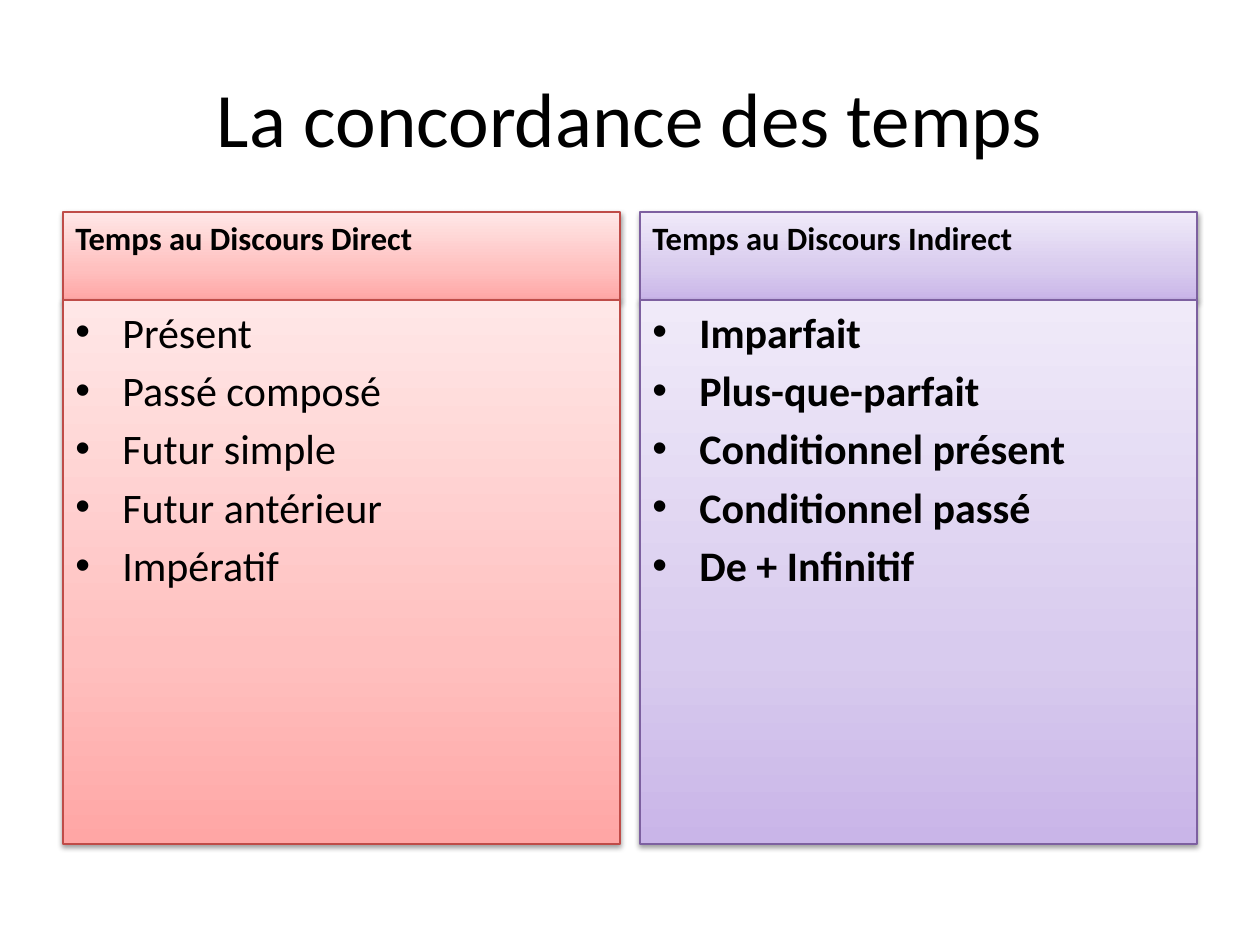
"""Build the slide on French tense agreement in reported speech."""
from lxml.etree import SubElement
from pptx import Presentation
from pptx.dml.color import RGBColor
from pptx.enum.shapes import MSO_SHAPE as Shape
from pptx.enum.text import MSO_ANCHOR as Anchor, PP_ALIGN as Align
from pptx.oxml.ns import qn
from pptx.util import Emu, Pt

EMU_PER_PX = 914400 / 126
BLACK = RGBColor(0x00, 0x00, 0x00)
RED = RGBColor(0xBF, 0x4C, 0x48)
PURPLE = RGBColor(0x7D, 0x60, 0xA0)
RED_SHADES = (RGBColor(0xFF, 0xA6, 0xA5), RGBColor(0xFF, 0xC0, 0xBF), RGBColor(0xFF, 0xE7, 0xE7))
PURPLE_SHADES = (RGBColor(0xC9, 0xB5, 0xE8), RGBColor(0xD8, 0xCB, 0xEE), RGBColor(0xF0, 0xEA, 0xF9))
SHADE_STOPS = (0, 35000, 100000)

COLUMNS = (
    ("Temps au Discours Direct", RED, RED_SHADES, False,
     ("Présent", "Passé composé", "Futur simple", "Futur antérieur", "Impératif")),
    ("Temps au Discours Indirect", PURPLE, PURPLE_SHADES, True,
     ("Imparfait", "Plus-que-parfait", "Conditionnel présent", "Conditionnel passé",
      "De + Infinitif")),
)
LEFT, COLUMN_WIDTH, COLUMN_STEP = 63, 557, 577
HEADER_TOP, HEADER_HEIGHT, LIST_HEIGHT = 212, 88, 544


def px(length):
    return Emu(round(length * EMU_PER_PX))


class TenseSlide:
    """Holds the text style and the current slide."""

    def __init__(self, deck, font="Calibri"):
        self.slide = deck.slides.add_slide(deck.slide_layouts[6])
        self.font = font

    def text_run(self, paragraph, text, size, bold=False):
        run = paragraph.add_run()
        run.text = text
        run.font.name = self.font
        run.font.size = Pt(size)
        run.font.bold = bold
        run.font.color.rgb = BLACK

    def title(self, text, *box):
        frame = self.slide.shapes.add_textbox(*map(px, box)).text_frame
        frame.word_wrap = True
        frame.vertical_anchor = Anchor.MIDDLE
        frame.paragraphs[0].alignment = Align.CENTER
        self.text_run(frame.paragraphs[0], text, 44)

    def panel(self, outline, shades, *box):
        panel = self.slide.shapes.add_shape(Shape.RECTANGLE, *map(px, box))
        panel.line.color.rgb = outline
        panel.line.width = Pt(0.75)
        self.shade(panel, shades)
        self.drop_shadow(panel)
        frame = panel.text_frame
        frame.word_wrap = True
        frame.vertical_anchor = Anchor.TOP
        frame.paragraphs[0].alignment = Align.LEFT
        return frame

    def shade(self, panel, shades):
        panel.fill.gradient()
        panel.fill.gradient_angle = 90
        stops = next(panel.element.spPr.iter(qn("a:gsLst")))
        for stop in list(stops):
            stops.remove(stop)
        for position, colour in zip(SHADE_STOPS, shades):
            stop = SubElement(stops, qn("a:gs"), pos=str(position))
            SubElement(stop, qn("a:srgbClr"), val=str(colour))

    def drop_shadow(self, panel):
        panel.shadow.inherit = False
        effects = panel.element.spPr.find(qn("a:effectLst"))
        shadow = SubElement(effects, qn("a:outerShdw"), blurRad="40000", dist="20000",
                            dir="5400000", rotWithShape="0")
        colour = SubElement(shadow, qn("a:srgbClr"), val=str(BLACK))
        SubElement(colour, qn("a:alpha"), val="38000")

    def header(self, text, outline, shades, *box):
        frame = self.panel(outline, shades, *box)
        self.text_run(frame.paragraphs[0], text, 18.6, bold=True)

    def bullets(self, tenses, bold, outline, shades, *box):
        frame = self.panel(outline, shades, *box)
        for index, tense in enumerate(tenses):
            paragraph = frame.add_paragraph() if index else frame.paragraphs[0]
            paragraph.alignment = Align.LEFT
            if index:
                paragraph.space_before = Pt(4.5)
            properties = paragraph._p.get_or_add_pPr()
            properties.set("marL", str(px(47)))
            properties.set("indent", str(-px(47)))
            SubElement(properties, qn("a:buFont"), typeface="Arial")
            SubElement(properties, qn("a:buChar"), char="•")
            self.text_run(paragraph, tense, 24, bold)


def main():
    deck = Presentation()
    deck.slide_width, deck.slide_height = px(1260), px(945)
    tense_slide = TenseSlide(deck)
    tense_slide.title("La concordance des temps", LEFT, 38, 1134, 158)
    for index, (heading, outline, shades, bold, tenses) in enumerate(COLUMNS):
        left = LEFT + index * COLUMN_STEP
        tense_slide.header(heading, outline, shades, left, HEADER_TOP, COLUMN_WIDTH, HEADER_HEIGHT)
        tense_slide.bullets(tenses, bold, outline, shades, left, HEADER_TOP + HEADER_HEIGHT,
                            COLUMN_WIDTH, LIST_HEIGHT)
    deck.save("out.pptx")


if __name__ == "__main__":
    main()
